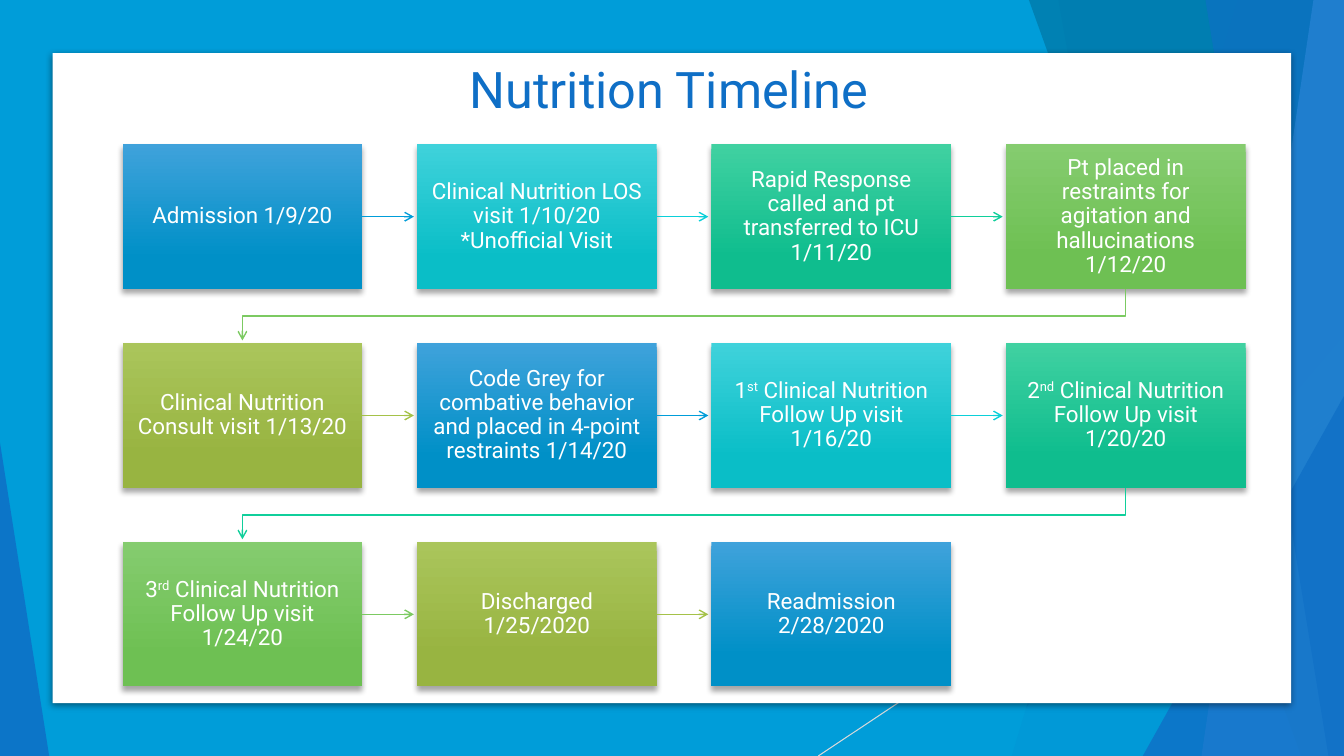
from lxml.etree import SubElement as Sub
from pptx import Presentation
from pptx.dml.color import RGBColor
from pptx.enum.shapes import MSO_CONNECTOR as Link, MSO_SHAPE as Kind
from pptx.enum.text import MSO_ANCHOR as Anchor, MSO_AUTO_SIZE as Fit, PP_ALIGN as Align
from pptx.oxml.ns import qn
from pptx.util import Cm, Pt

FONT = "Roboto"
WIDE, HIGH = 33.87, 19.05
hue = RGBColor.from_string


def paint(shape, color, alpha=100):
    """Give a flat fill of the given opacity, with no outline or shadow."""
    shape.shadow.inherit = False
    shape.line.fill.background()
    shape.fill.solid()
    shape.fill.fore_color.rgb = hue(color)
    if alpha < 100:
        tint = shape.fill._xPr.find(".//" + qn("a:srgbClr"))
        Sub(tint, qn("a:alpha"), val=str(alpha * 1000))


def cast(shape, blur, dist, alpha):
    """Add a black shadow falling straight down; blur and dist in points."""
    shape.shadow.inherit = False
    effects = shape._element.spPr.find(qn("a:effectLst"))
    drop = Sub(effects, qn("a:outerShdw"), blurRad=str(Pt(blur)), dist=str(Pt(dist)),
               dir="5400000", algn="ctr", rotWithShape="0")
    tint = Sub(drop, qn("a:srgbClr"), val="000000")
    Sub(tint, qn("a:alpha"), val=str(alpha * 1000))


deck = Presentation()
deck.slide_width, deck.slide_height = Cm(WIDE), Cm(HIGH)
slide = deck.slides.add_slide(deck.slide_layouts[5])
shapes = slide.shapes

# Backdrop
back = shapes.add_shape(Kind.RECTANGLE, 0, 0, Cm(WIDE), Cm(HIGH))
paint(back, "009DD9")
ray = shapes.add_connector(Link.STRAIGHT, Cm(WIDE), Cm(10.24), Cm(20.62), Cm(HIGH))
ray.line.color.rgb = hue("D9D9D9")
ray.line.width = Pt(0.75)
Sub(ray._element.spPr, qn("a:effectLst"))

# Two numbers: top and foot of a panel's slanted left edge.
# Four numbers: left, top, width and peak of a triangle standing on the bottom edge.
facets = [
    ((31.19, 25.5), "0F6FC6", 30),
    ((26.67, 30.05), "0F6FC6", 20),
    ((24.82, 8.46, 9.05, 1), "009DD9", 72),
    ((25.93, 32.79), "0076A3", 70),
    ((33.1, 30.28), "59AAF2", 70),
    ((30.38, 33.48), "0F6FC6", 65),
    ((28.8, 9.98, 5.07, 1), "0F6FC6", 80),
    ((0, 11.15, 1.24, 0), "0F6FC6", 85),
]
for place, color, alpha in facets:
    if len(place) == 2:
        top, foot = place
        pen = shapes.build_freeform(Cm(top), 0)
        pen.add_line_segments([(Cm(WIDE), 0), (Cm(WIDE), Cm(HIGH)), (Cm(foot), Cm(HIGH))])
        facet = pen.convert_to_shape()
    else:
        left, top, width, peak = place
        facet = shapes.add_shape(Kind.ISOSCELES_TRIANGLE, Cm(left), Cm(top),
                                 Cm(width), Cm(HIGH - top))
        facet.adjustments[0] = peak
    paint(facet, color, alpha)

# White card and title
card = shapes.add_shape(Kind.RECTANGLE, Cm(1.33), Cm(1.34), Cm(31.21), Cm(16.38))
paint(card, "FFFFFF")
cast(card, 5, 1.4, 43)

title = shapes.title
shapes._spTree.append(title._element)
title.left, title.top, title.width, title.height = Cm(11.58), Cm(1.34), Cm(13), Cm(2.08)
frame = title.text_frame
frame.auto_size = Fit.NONE
frame.vertical_anchor = Anchor.TOP
para = frame.paragraphs[0]
para.alignment = Align.LEFT
run = para.add_run()
run.text = "Nutrition Timeline"
run.font.name, run.font.size = FONT, Pt(36)
run.font.color.rgb = hue("0F6FC6")

# Timeline: the second part of a step is superscript
steps = [
    ["Admission 1/9/20"],
    ["Clinical Nutrition LOS visit 1/10/20 *Unofficial Visit"],
    ["Rapid Response called and pt transferred to ICU 1/11/20"],
    ["Pt placed in restraints for agitation and hallucinations 1/12/20"],
    ["Clinical Nutrition Consult visit 1/13/20"],
    ["Code Grey for combative behavior and placed in 4-point restraints 1/14/20"],
    ["1", "st", " Clinical Nutrition Follow Up visit 1/16/20"],
    ["2", "nd", " Clinical Nutrition Follow Up visit 1/20/20"],
    ["3", "rd", " Clinical Nutrition Follow Up visit 1/24/20"],
    ["Discharged 1/25/2020"],
    ["Readmission 2/28/2020"],
]
# Arrow colour, then top and bottom of the box gradient
tones = [
    ("009DD9", "3FA2DB", "0090C7"),
    ("0BD0D9", "3FD2DB", "0ABEC7"),
    ("10CF9B", "40D1A1", "0FBD8E"),
    ("7CCA62", "85CC6F", "6EC053"),
    ("A5C249", "AAC55B", "98B441"),
]
COLS = 4
LEFT, TOP, BOXW, BOXH = 3.09, 3.64, 6.04, 3.64
STEPX, STEPY, REACH = 7.42, 5.01, 1.3

for i, parts in enumerate(steps):
    row, col = divmod(i, COLS)
    x, y = LEFT + col * STEPX, TOP + row * STEPY
    edge, light, dark = tones[i % len(tones)]

    box = shapes.add_shape(Kind.RECTANGLE, Cm(x), Cm(y), Cm(BOXW), Cm(BOXH))
    box.line.fill.background()
    box.fill.gradient()
    box.fill.gradient_angle = 270
    for stop, color, at in zip(box.fill.gradient_stops, (light, dark), (0, 0.78)):
        stop.color.rgb = hue(color)
        stop.position = at
    cast(box, 4, 3, 35)

    frame = box.text_frame
    frame.word_wrap = True
    frame.vertical_anchor = Anchor.MIDDLE
    frame.margin_left = frame.margin_right = Cm(0.3)
    frame.margin_top = frame.margin_bottom = Cm(0.3)
    para = frame.paragraphs[0]
    para.alignment = Align.CENTER
    para.line_spacing = 0.9
    for n, part in enumerate(parts):
        run = para.add_run()
        run.text = part
        run.font.name, run.font.size = FONT, Pt(16)
        run.font.color.rgb = hue("FFFFFF")
        if n == 1:
            run._r.get_or_add_rPr().set("baseline", "30000")

    if i == len(steps) - 1:
        break
    if col < COLS - 1:
        mid, end = y + BOXH / 2, x + BOXW
        arrow = shapes.add_connector(Link.STRAIGHT, Cm(end), Cm(mid), Cm(end + REACH), Cm(mid))
        arrow.begin_connect(box, 3)
        Sub(arrow._element.spPr, qn("a:effectLst"))
    else:
        start, goal = Cm(x + BOXW / 2), Cm(LEFT + BOXW / 2)
        foot = y + BOXH
        bend = Cm(foot + (STEPY - BOXH) / 2)
        pen = shapes.build_freeform(start, Cm(foot))
        pen.add_line_segments([(start, bend), (goal, bend), (goal, Cm(foot + REACH))], close=False)
        arrow = pen.convert_to_shape()
        arrow.fill.background()
        arrow.shadow.inherit = False
    arrow.line.color.rgb = hue(edge)
    arrow.line.width = Pt(1)
    Sub(arrow.line._get_or_add_ln(), qn("a:tailEnd"), type="arrow")

deck.save("out.pptx")
